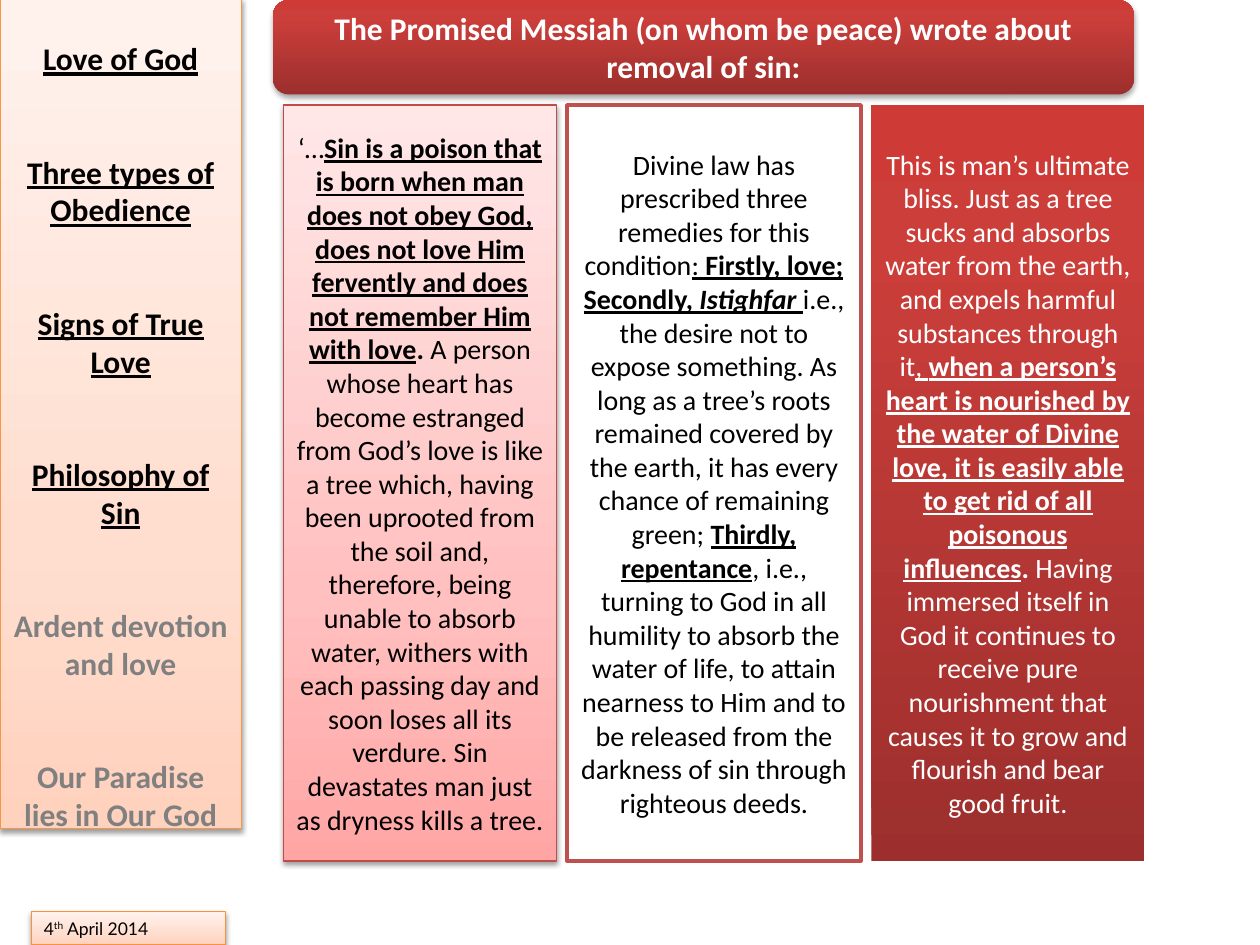
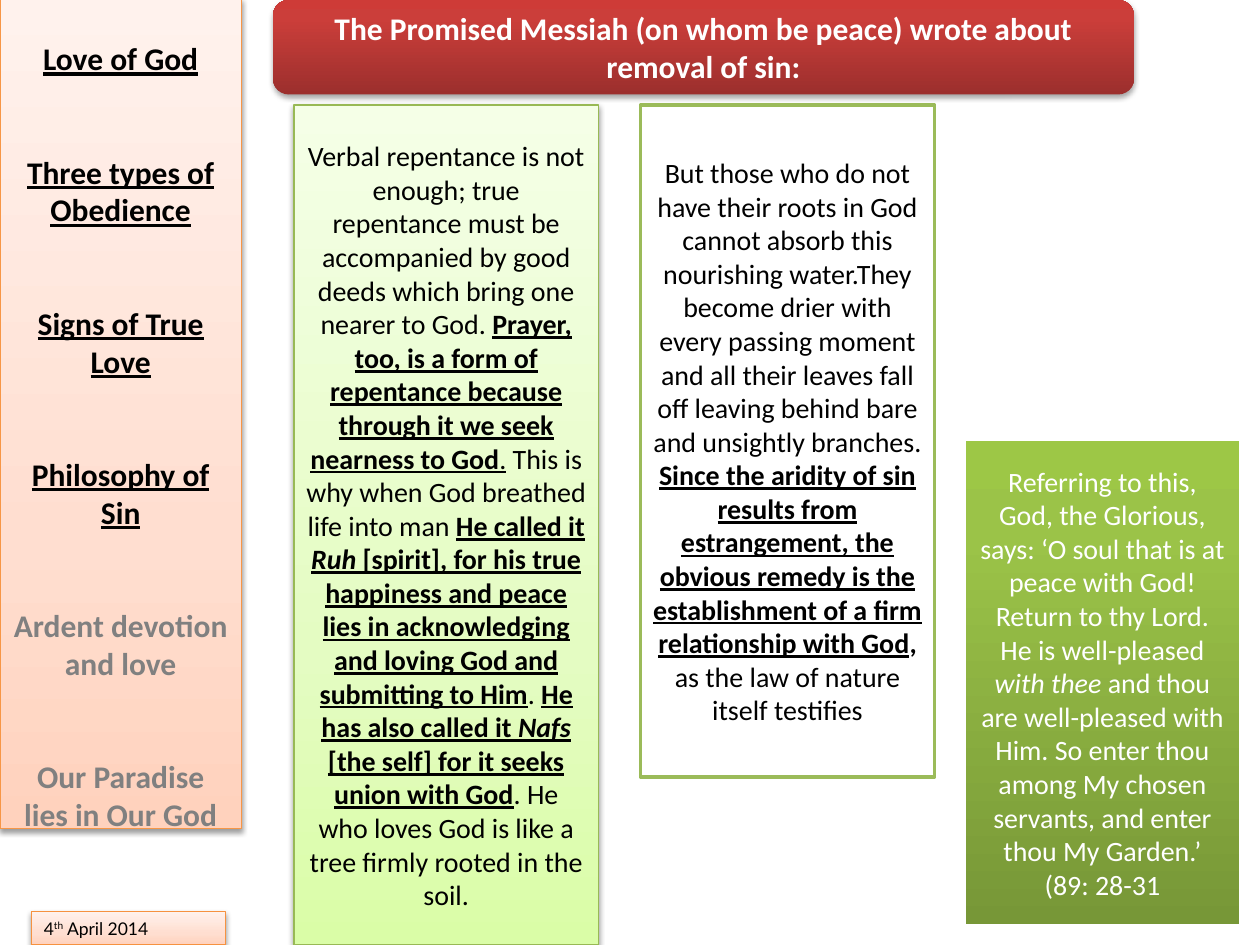
from lxml.etree import SubElement
from pptx import Presentation
from pptx.dml.color import RGBColor
from pptx.enum.shapes import MSO_SHAPE as Preset
from pptx.enum.text import MSO_ANCHOR as Anchor, PP_ALIGN as Align
from pptx.oxml.ns import qn
from pptx.util import Inches, Pt

# Grid: 120 columns by 90 rows of square cells
CELL = Inches(10) / 120
COLUMNS, ROWS = 120, 90

# Colours
BLACK = RGBColor(0x00, 0x00, 0x00)
WHITE = RGBColor(0xFF, 0xFF, 0xFF)
GREY = RGBColor(0x80, 0x80, 0x80)
ORANGE = RGBColor(0xF7, 0x96, 0x46)
DATE_ORANGE = RGBColor(0xF6, 0x92, 0x40)
RED = RGBColor(0xC0, 0x50, 0x4D)
RED_EDGE = RGBColor(0xBF, 0x4C, 0x48)
GREEN = RGBColor(0x9B, 0xBB, 0x59)
GREEN_EDGE = RGBColor(0x98, 0xB9, 0x55)

# Gradients, from bottom to top: (position in percent, colour)
PEACH = [(0, RGBColor(0xFF, 0xD2, 0xBD)), (35, RGBColor(0xFF, 0xDE, 0xD0)),
         (100, RGBColor(0xFF, 0xF2, 0xED))]
PINK = [(0, RGBColor(0xFF, 0xA6, 0xA5)), (35, RGBColor(0xFF, 0xC0, 0xBF)),
        (100, RGBColor(0xFF, 0xE7, 0xE7))]
LIME = [(0, RGBColor(0xDA, 0xFD, 0xA7)), (35, RGBColor(0xE4, 0xFC, 0xC2)),
        (100, RGBColor(0xF5, 0xFF, 0xE7))]
DEEP_RED = [(0, RGBColor(0x9C, 0x2F, 0x2D)), (80, RGBColor(0xCB, 0x3E, 0x3A)),
            (100, RGBColor(0xCE, 0x3B, 0x37))]
DEEP_GREEN = [(0, RGBColor(0x77, 0x97, 0x37)), (80, RGBColor(0x9B, 0xC3, 0x48)),
              (100, RGBColor(0x9D, 0xC7, 0x46))]

# Shared wording
TITLE = "The Promised Messiah (on whom be peace) wrote about removal of sin:"
TOPICS = ["Love of God", "Three types of Obedience", "Signs of True Love",
          "Philosophy of Sin", "Ardent devotion and love",
          "Our Paradise lies in Our God"]
TOPICS_COVERED = 4

# Panel wording: (text, style), where b is bold, i italic and u underlined
POISON = [
    ("‘…", ""),
    ("Sin is a poison that is born when man does not obey God, does not love "
     "Him fervently and does not remember Him with love", "bu"),
    (". ", "b"),
    ("A person whose heart has become estranged from God’s love is like a tree "
     "which, having been uprooted from the soil and, therefore, being unable to "
     "absorb water, withers with each passing day and soon loses all its "
     "verdure. Sin devastates man just as dryness kills a tree.", ""),
]
REMEDIES = [
    ("Divine law has prescribed three remedies for this condition", ""),
    (": ", "u"),
    ("Firstly, love; Secondly, ", "bu"),
    ("Istighfar ", "biu"),
    ("i.e., the desire not to expose something. As long as a tree’s roots "
     "remained covered by the earth, it has every chance of remaining green; ", ""),
    ("Thirdly, repentance", "bu"),
    (", i.e., turning to God in all humility to absorb the water of life, to "
     "attain nearness to Him and to be released from the darkness of sin "
     "through righteous deeds.", ""),
]
BLISS = [
    ("This is man’s ultimate bliss. Just as a tree sucks and absorbs water from "
     "the earth, and expels harmful substances through it", ""),
    (", ", "u"),
    ("when a person’s heart is nourished by the water of Divine love, it is "
     "easily able to get rid of all poisonous influences", "bu"),
    (". ", "b"),
    ("Having immersed itself in God it continues to receive pure nourishment "
     "that causes it to grow and flourish and bear good fruit.", ""),
]
REPENTANCE = [
    ("Verbal repentance is not enough; true repentance must be accompanied by "
     "good deeds which bring one nearer to God. ", ""),
    ("Prayer, too, is a form of repentance because through it we seek nearness "
     "to God", "bu"),
    (".", "u"),
    (" This is why when God breathed life into man ", ""),
    ("He called it ", "bu"),
    ("Ruh ", "biu"),
    ("[spirit], for his true happiness and peace lies in acknowledging and "
     "loving God and submitting to Him", "bu"),
    (". ", ""),
    ("He has also called it ", "bu"),
    ("Nafs", "biu"),
    (" [the self] for it seeks union with God", "bu"),
    (". He who loves God is like a tree firmly rooted in the soil.", ""),
]
ARIDITY = [
    ("But those who do not have their roots in God cannot absorb this "
     "nourishing water.They become drier with every passing moment and all "
     "their leaves fall off leaving behind bare and unsightly branches. ", ""),
    ("Since the aridity of sin results from estrangement, the obvious remedy is "
     "the establishment of a firm relationship with God", "bu"),
    (",", "b"),
    (" as the law of nature itself testifies", ""),
]
GARDEN = [
    ("Referring to this, God, the Glorious, says: ‘O soul that is at peace with "
     "God! Return to thy Lord. He is well-pleased ", ""),
    ("with thee", "i"),
    (" and thou are well-pleased with Him. So enter thou among My chosen "
     "servants, and enter thou My Garden.’ (89: 28-31", ""),
]


class SermonDeck:
    """Holds the style and the current page."""

    font = "Calibri"
    date_font = "Lato"
    title_size, body_size, date_size = 18, 16, 10

    def __init__(self):
        self.deck = Presentation()
        self.deck.slide_width = round(COLUMNS * CELL)
        self.deck.slide_height = round(ROWS * CELL)
        self.page = None

    def add_page(self):
        self.page = self.deck.slides.add_slide(self.deck.slide_layouts[6])
        self.sidebar()
        self.date()
        self.title()

    def box(self, area, fill, edge=None, edge_width=0.75, shadow=0,
            preset=Preset.RECTANGLE):
        """Draw a filled shape; shadow is its opacity in percent."""
        shape = self.page.shapes.add_shape(preset, *(round(n * CELL) for n in area))
        if isinstance(fill, list):
            self.gradient(shape, fill)
        else:
            shape.fill.solid()
            shape.fill.fore_color.rgb = fill
        if edge is None:
            shape.line.fill.background()
        else:
            shape.line.color.rgb = edge
            shape.line.width = Pt(edge_width)
        shape.shadow.inherit = False
        if shadow:
            self.drop_shadow(shape, shadow)
        shape.text_frame.word_wrap = True
        shape.text_frame.vertical_anchor = Anchor.MIDDLE
        return shape

    def gradient(self, shape, stops):
        shape.fill.gradient()
        shape.fill.gradient_angle = 90
        stop_list = shape._element.spPr.find(qn("a:gradFill")).find(qn("a:gsLst"))
        stop_list.clear()
        for position, colour in stops:
            stop = SubElement(stop_list, qn("a:gs"), pos=str(position * 1000))
            SubElement(stop, qn("a:srgbClr"), val=str(colour))

    def drop_shadow(self, shape, opacity):
        effects = shape._element.spPr.find(qn("a:effectLst"))
        outer = SubElement(effects, qn("a:outerShdw"), blurRad=str(Pt(3.1)),
                           dist=str(Pt(1.6)), dir="5400000", rotWithShape="0")
        colour = SubElement(outer, qn("a:srgbClr"), val=str(BLACK))
        SubElement(colour, qn("a:alpha"), val=str(opacity * 1000))

    def add_spans(self, para, spans, size, colour, font=font, align=Align.CENTER):
        para.alignment = align
        for text, style in spans:
            span = para.add_run()
            span.text = text
            span.font.name = font
            span.font.size = Pt(size)
            span.font.color.rgb = colour
            span.font.bold = "b" in style
            span.font.italic = "i" in style
            span.font.underline = "u" in style

    def sidebar(self):
        frame = self.box((0, -0.1, 23, 79), PEACH, ORANGE, shadow=38).text_frame
        frame.vertical_anchor = Anchor.TOP
        frame.margin_top = Inches(0.32)
        frame.margin_bottom = 0
        for number, topic in enumerate(TOPICS):
            para = frame.add_paragraph() if number else frame.paragraphs[0]
            if number:
                para.space_before = Pt(43.2)
            covered = number < TOPICS_COVERED
            self.add_spans(para, [(topic, "bu" if covered else "b")],
                           self.title_size, BLACK if covered else GREY)

    def date(self):
        frame = self.box((3, 86.8, 18.5, 3.2), PEACH, DATE_ORANGE,
                         shadow=38).text_frame
        frame.word_wrap = False
        frame.vertical_anchor = Anchor.TOP
        para = frame.paragraphs[0]
        self.add_spans(para, [("4", ""), ("th", ""), (" April 2014", "")],
                       self.date_size, BLACK, self.date_font, Align.LEFT)
        para.runs[1].font._element.set("baseline", "30000")

    def title(self):
        bar = self.box((26, 0, 82, 9), DEEP_RED, shadow=35,
                       preset=Preset.ROUNDED_RECTANGLE)
        self.add_spans(bar.text_frame.paragraphs[0], [(TITLE, "b")],
                       self.title_size, WHITE)

    def panel(self, area, spans, fill, colour=BLACK, **look):
        shape = self.box(area, fill, **look)
        self.add_spans(shape.text_frame.paragraphs[0], spans, self.body_size,
                       colour)


def main():
    sermon = SermonDeck()

    # Sin and its remedies
    sermon.add_page()
    sermon.panel((27, 10, 26, 72), POISON, PINK, edge=RED_EDGE, shadow=38)
    sermon.panel((54, 10, 28, 72), REMEDIES, WHITE, edge=RED, edge_width=2)
    sermon.panel((83, 10, 26, 72), BLISS, DEEP_RED, WHITE)

    # Repentance and the soul at peace
    sermon.add_page()
    sermon.panel((28, 10, 29, 80), REPENTANCE, LIME, edge=GREEN_EDGE, shadow=38)
    sermon.panel((61, 10, 28, 64), ARIDITY, WHITE, edge=GREEN, edge_width=2)
    sermon.panel((92, 42, 26, 46), GARDEN, DEEP_GREEN, WHITE)

    sermon.deck.save("out.pptx")


if __name__ == "__main__":
    main()
